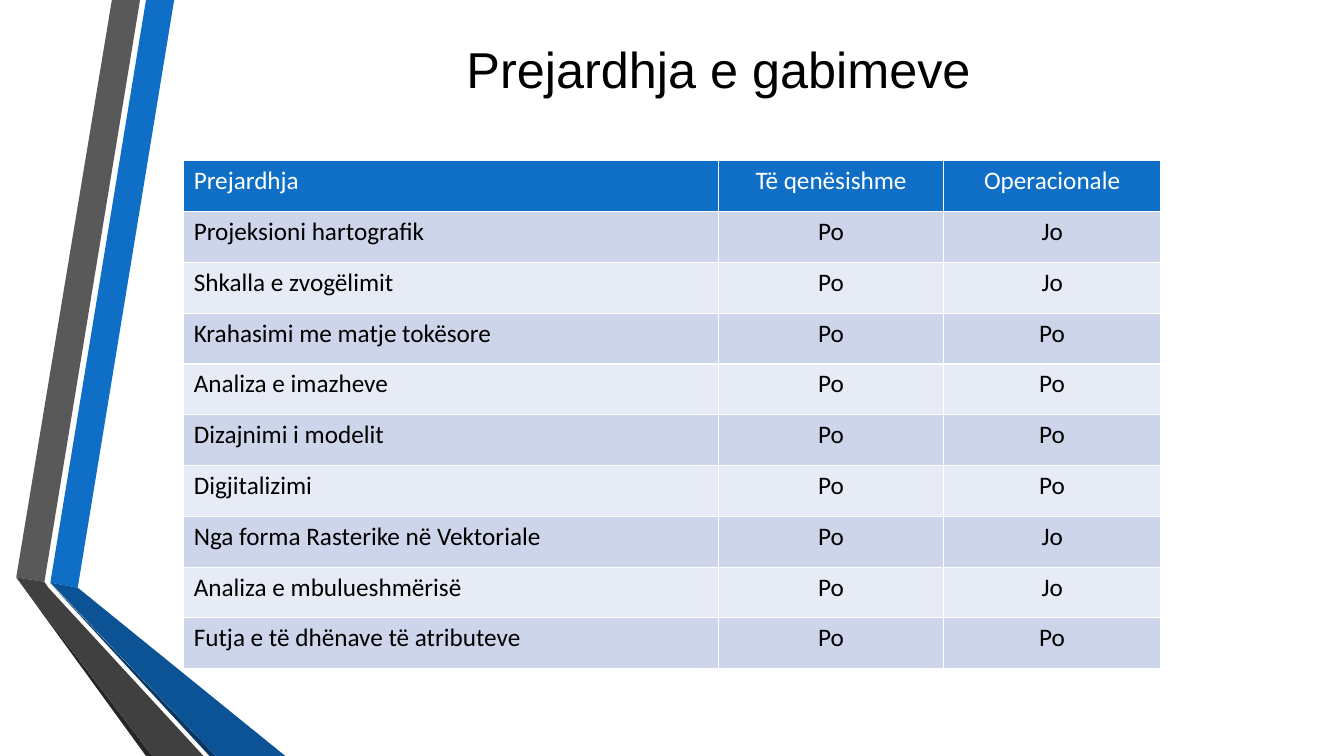
from pptx import Presentation
from pptx.dml.color import RGBColor
from pptx.enum.text import MSO_ANCHOR, PP_ALIGN
from pptx.util import Cm, Pt

TITLE = "Prejardhja e gabimeve"
ROWS = [
    ("Prejardhja", "Të qenësishme", "Operacionale"),
    ("Projeksioni hartografik", "Po", "Jo"),
    ("Shkalla e zvogëlimit", "Po", "Jo"),
    ("Krahasimi me matje tokësore", "Po", "Po"),
    ("Analiza e imazheve", "Po", "Po"),
    ("Dizajnimi i modelit", "Po", "Po"),
    ("Digjitalizimi", "Po", "Po"),
    ("Nga forma Rasterike në Vektoriale", "Po", "Jo"),
    ("Analiza e mbulueshmërisë", "Po", "Jo"),
    ("Futja e të dhënave të atributeve", "Po", "Po"),
]
COLORS = {
    "blue": "0F6FC6", "blue fold": "0B5394", "blue edge": "083763",
    "gray": "595959", "gray fold": "404040", "gray edge": "262626",
    "odd row": "CCD5EA", "even row": "E7EBF5",
    "black": "000000", "white": "FFFFFF",
}
# Corners in centimetres, from back to front
RIBBONS = [
    ("blue", [(1.27, 14.68), (1.96, 14.81), (4.39, 0), (3.68, 0)]),
    ("gray", [(3.53, 0), (2.82, 0), (0.41, 14.55), (1.12, 14.66)]),
    ("gray edge", [(0.41, 14.55), (3.68, 19.05), (3.84, 19.05)]),
    ("blue edge", [(1.27, 14.7), (5.28, 19.05), (5.44, 19.05)]),
    ("blue fold", [(1.27, 14.68), (5.44, 19.05), (7.19, 19.05), (1.96, 14.81)]),
    ("gray fold", [(5.13, 19.05), (1.22, 14.81), (1.12, 14.66), (0.41, 14.55),
                   (3.84, 19.05)]),
]
COLUMN_WIDTHS = [13.48, 5.67, 5.47]
ROW_HEIGHT = 1.28
TABLE_LEFT, TABLE_TOP = 4.63, 4.05


def color(name):
    return RGBColor.from_string(COLORS[name])


def style_paragraph(para, font_name, size, color_name, align):
    para.alignment = align
    para.font.name = font_name
    para.font.size = Pt(size)
    para.font.bold = False
    para.font.color.rgb = color(color_name)


def add_ribbon(page, color_name, corners):
    points = [(Cm(x), Cm(y)) for x, y in corners]
    builder = page.shapes.build_freeform(*points[0])
    builder.add_line_segments(points[1:], close=True)
    ribbon = builder.convert_to_shape()
    ribbon.shadow.inherit = False
    ribbon.fill.solid()
    ribbon.fill.fore_color.rgb = color(color_name)
    ribbon.line.fill.background()


def set_title(page):
    title = page.shapes.title
    title.left, title.top = Cm(3.86), Cm(0)
    title.width, title.height = Cm(28.5), Cm(3.45)
    title.text_frame.text = TITLE
    title.text_frame.vertical_anchor = MSO_ANCHOR.MIDDLE
    style_paragraph(title.text_frame.paragraphs[0], "Arial", 36, "black",
                    PP_ALIGN.CENTER)


def add_error_table(page):
    table = page.shapes.add_table(
        len(ROWS), len(COLUMN_WIDTHS), Cm(TABLE_LEFT), Cm(TABLE_TOP),
        Cm(sum(COLUMN_WIDTHS)), Cm(ROW_HEIGHT * len(ROWS))).table
    for column, width in zip(table.columns, COLUMN_WIDTHS):
        column.width = Cm(width)
    for r, texts in enumerate(ROWS):
        table.rows[r].height = Cm(ROW_HEIGHT)
        if r == 0:
            fill, ink = "blue", "white"
        else:
            fill, ink = ("odd row" if r % 2 else "even row"), "black"
        for c, text in enumerate(texts):
            cell = table.cell(r, c)
            cell.text = text
            cell.fill.solid()
            cell.fill.fore_color.rgb = color(fill)
            style_paragraph(cell.text_frame.paragraphs[0], "Calibri", 18, ink,
                            PP_ALIGN.CENTER if c else PP_ALIGN.LEFT)


def main():
    deck = Presentation()
    deck.slide_width, deck.slide_height = Cm(33.87), Cm(19.05)
    page = deck.slides.add_slide(deck.slide_layouts[5])
    for color_name, corners in RIBBONS:
        add_ribbon(page, color_name, corners)
    set_title(page)
    add_error_table(page)
    deck.save("out.pptx")


if __name__ == "__main__":
    main()
